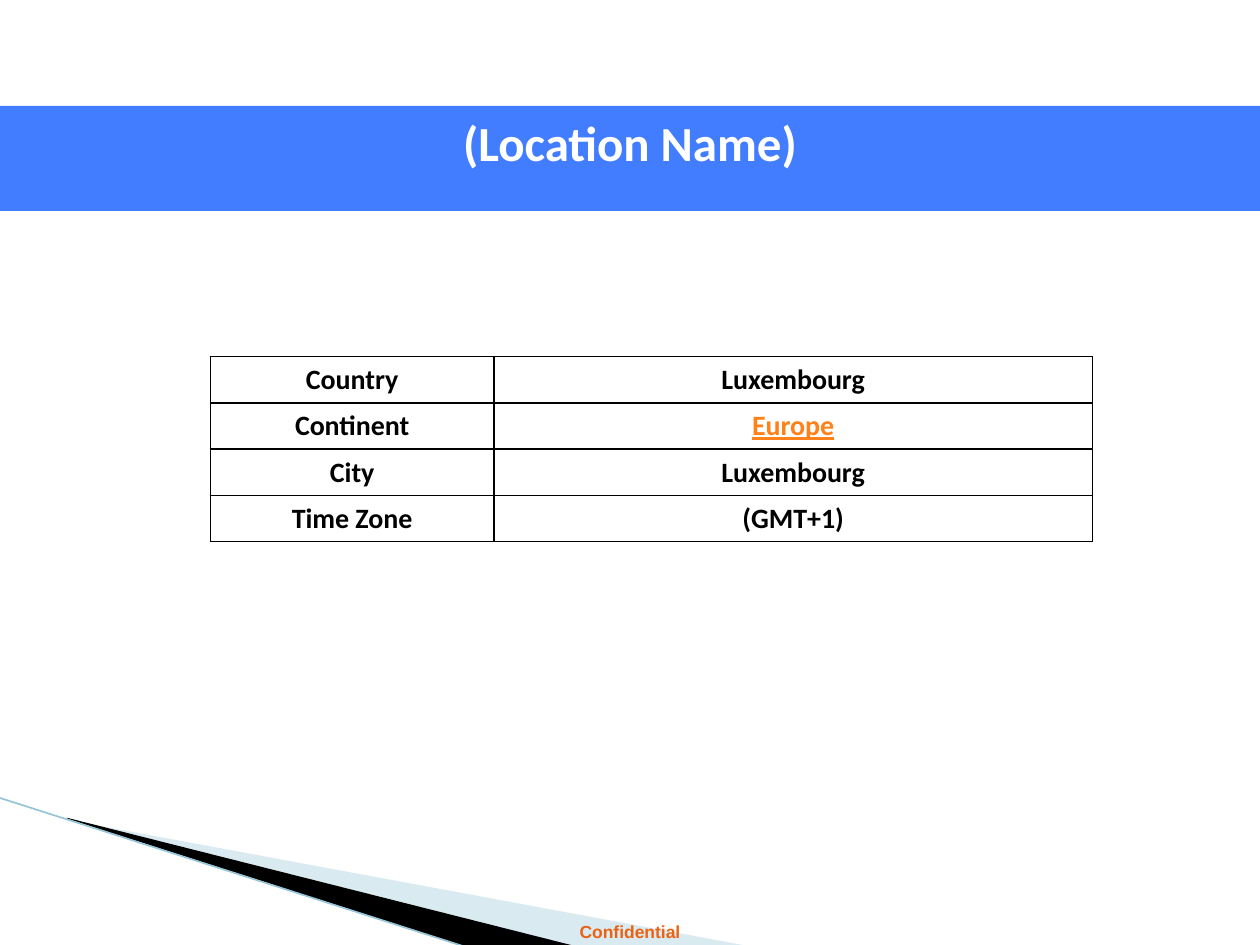
"""Build the location slide with its banner, fact table and corner sweep."""
import dataclasses

import lxml.etree as etree
import pptx
import pptx.dml.color
import pptx.enum.shapes
import pptx.enum.text
import pptx.oxml.ns
import pptx.util

Inches = pptx.util.Inches
Pt = pptx.util.Pt
qn = pptx.oxml.ns.qn


@dataclasses.dataclass(frozen=True)
class Theme:
    face: str = "Calibri"
    small: str = "Arial"
    head: int = 28
    body: int = 16
    note: int = 10
    blue: str = "437DFF"
    white: str = "FFFFFF"
    black: str = "000000"
    pale: str = "A0CBDC"
    edge: str = "97C5D8"
    accent: str = "FF8119"
    alert: str = "EB6312"


def tint(hue):
    return pptx.dml.color.RGBColor.from_string(hue)


class Page:
    def __init__(self, slide, theme):
        self.slide = slide
        self.shapes = slide.shapes
        self.theme = theme

    def letter(self, frame, text, size, hue, face=None, under=False):
        frame.text = text
        para = frame.paragraphs[0]
        para.alignment = pptx.enum.text.PP_ALIGN.CENTER
        font = para.font
        font.name = face or self.theme.face
        font.size = Pt(size)
        font.bold = True
        font.underline = under
        font.color.rgb = tint(hue)

    def place(self, shape, box):
        shape.left, shape.top, shape.width, shape.height = map(Inches, box)

    def banner(self, text, box):
        title = self.shapes.title
        self.place(title, box)
        title.fill.solid()
        title.fill.fore_color.rgb = tint(self.theme.blue)
        frame = title.text_frame
        frame.vertical_anchor = pptx.enum.text.MSO_ANCHOR.TOP
        frame.auto_size = pptx.enum.text.MSO_AUTO_SIZE.SHAPE_TO_FIT_TEXT
        self.letter(frame, text, self.theme.head, self.theme.white)

    def label(self, text, box):
        frame = self.shapes.add_textbox(*map(Inches, box)).text_frame
        frame.word_wrap = True
        frame.auto_size = pptx.enum.text.MSO_AUTO_SIZE.SHAPE_TO_FIT_TEXT
        self.letter(frame, text, self.theme.note, self.theme.alert,
                    self.theme.small)

    def wedge(self, points, hue, alpha=100):
        first, *rest = [tuple(map(Inches, point)) for point in points]
        pen = self.shapes.build_freeform(*first)
        pen.add_line_segments(rest, close=True)
        shape = pen.convert_to_shape()
        shape.shadow.inherit = False
        shape.line.fill.background()
        shape.fill.solid()
        shape.fill.fore_color.rgb = tint(hue)
        if alpha < 100:
            color = shape._element.spPr.find(".//" + qn("a:srgbClr"))
            etree.SubElement(color, qn("a:alpha"), val=str(alpha * 1000))

    def stroke(self, start, end, hue, width):
        kind = pptx.enum.shapes.MSO_CONNECTOR.STRAIGHT
        line = self.shapes.add_connector(kind, *map(Inches, start + end))
        line.line.color.rgb = tint(hue)
        line.line.width = Pt(width)
        etree.SubElement(line._element.spPr, qn("a:effectLst"))

    def frame(self, cell, hue, width):
        props = cell._tc.get_or_add_tcPr()
        for spot, side in enumerate(("lnL", "lnR", "lnT", "lnB")):
            line = etree.Element(qn("a:" + side), w=str(int(Pt(width))))
            fill = etree.SubElement(line, qn("a:solidFill"))
            etree.SubElement(fill, qn("a:srgbClr"), val=hue)
            props.insert(spot, line)

    def table(self, rows, box, widths, marked):
        theme = self.theme
        grid = self.shapes.add_table(len(rows), len(widths),
                                     *map(Inches, box)).table
        grid.first_row = grid.horz_banding = False
        for column, width in zip(grid.columns, widths):
            column.width = Inches(width)
        for row, texts in zip(grid.rows, rows):
            for cell, text in zip(row.cells, texts):
                special = text == marked
                hue = theme.accent if special else theme.black
                self.letter(cell.text_frame, text, theme.body, hue,
                            under=special)
                cell.vertical_anchor = pptx.enum.text.MSO_ANCHOR.MIDDLE
                cell.fill.background()
                self.frame(cell, theme.black, 1)


def main():
    deck = pptx.Presentation()
    deck.slide_width, deck.slide_height = Inches(10), Inches(7.5)
    theme = Theme()
    page = Page(deck.slides.add_slide(deck.slide_layouts[5]), theme)
    page.wedge([(0.55, 6.51), (5.95, 7.51), (4.56, 7.51), (0.55, 6.5)],
               theme.pale, 40)
    page.wedge([(0.53, 6.49), (4.57, 7.51), (3.72, 7.52), (0.54, 6.5)],
               theme.black)
    page.stroke((-0.01, 6.33), (3.71, 7.52), theme.edge, 0.95)
    page.label("Confidential", (0, 7.26, 10, 0.27))
    page.banner("(Location Name)", (0, 0.84, 10, 0.57))
    facts = [
        ("Country", "Luxembourg"),
        ("Continent", "Europe"),
        ("City", "Luxembourg"),
        ("Time Zone", "(GMT+1)"),
    ]
    page.table(facts, (1.67, 2.83, 7, 1.47), (2.25, 4.75), "Europe")
    deck.save("out.pptx")


if __name__ == "__main__":
    main()
